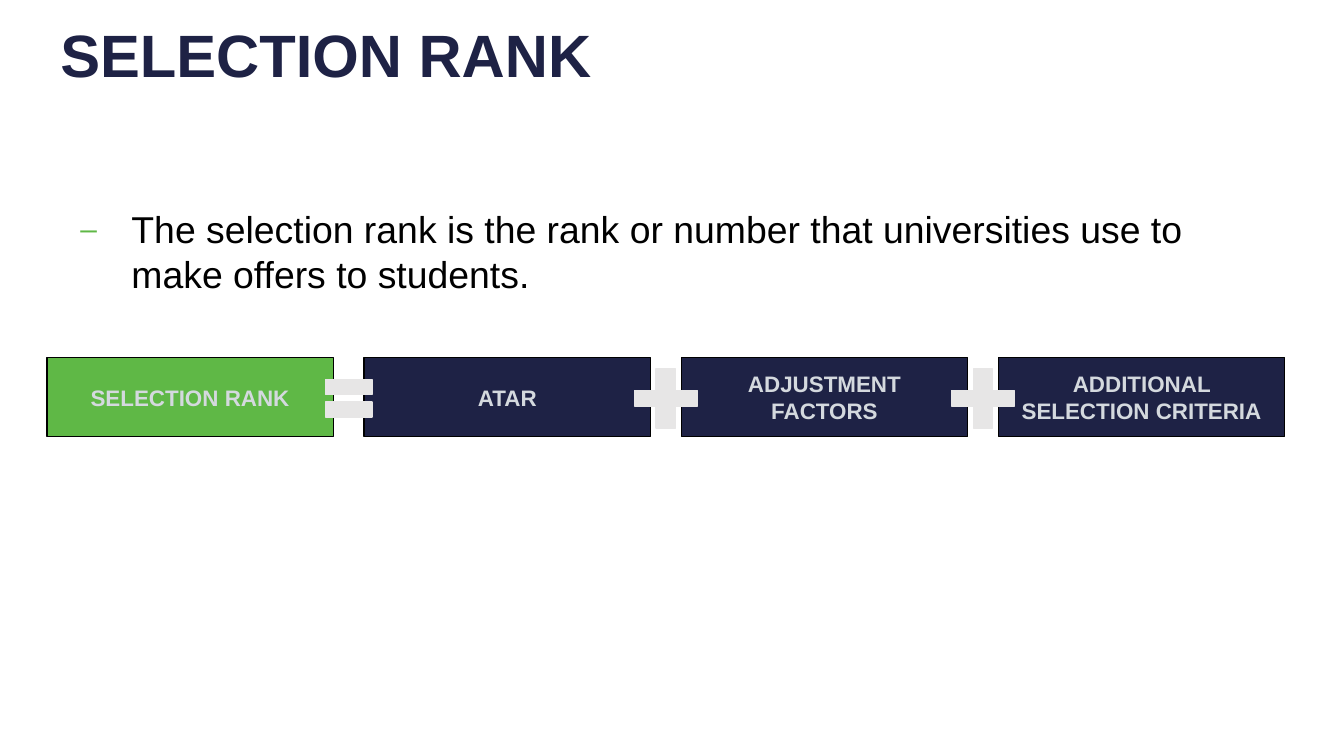
from lxml import etree
from pptx import Presentation
from pptx.dml.color import RGBColor
from pptx.enum.shapes import MSO_SHAPE
from pptx.enum.text import MSO_ANCHOR, PP_ALIGN
from pptx.oxml.ns import qn
from pptx.util import Inches, Pt

RECTANGLE, PLUS, EQUAL = MSO_SHAPE.RECTANGLE, MSO_SHAPE.CROSS, MSO_SHAPE.MATH_EQUAL
TOP, MIDDLE = MSO_ANCHOR.TOP, MSO_ANCHOR.MIDDLE
LEFT, CENTER = PP_ALIGN.LEFT, PP_ALIGN.CENTER

SLIDE_WIDTH = 10
SLIDE_HEIGHT = SLIDE_WIDTH * 9 / 16

COLORS = {
    "navy": "1E2245",
    "green": "5FB846",
    "label": "D4D9DE",
    "operator": "E7E6E6",
    "black": "000000",
}
TITLE_FONT = {"name": "Arial", "size": Pt(32), "bold": True}
BODY_FONT = {"name": "Arial", "size": Pt(20), "bold": False}
LABEL_FONT = {"name": "Arial", "size": Pt(12), "bold": True}

TERMS = [
    ("SELECTION RANK", "green"),
    ("ATAR", "navy"),
    ("ADJUSTMENT FACTORS", "navy"),
    ("ADDITIONAL SELECTION CRITERIA", "navy"),
]
OPERATORS = [(EQUAL, 0.47), (PLUS, 0.44), (PLUS, 0.44)]
TERM_GAP = 0.23
OPERATOR_WIDTH = 0.47
OPERATOR_DROP = 0.01
PLUS_ADJUSTMENT = 0.37


def color(name):
    """Return the named colour of the palette."""
    return RGBColor.from_string(COLORS[name])


def write_text(shape, text, font, color_name, anchor, alignment):
    """Write one formatted paragraph into a shape and return it."""
    frame = shape.text_frame
    frame.word_wrap = True
    frame.vertical_anchor = anchor
    paragraph = frame.paragraphs[0]
    paragraph.alignment = alignment
    run = paragraph.add_run()
    run.text = text
    for attribute, value in font.items():
        setattr(run.font, attribute, value)
    run.font.color.rgb = color(color_name)
    return paragraph


def add_block(slide, kind, left, top, width, height, fill, line):
    """Add a flat filled shape with a thin outline."""
    shape = slide.shapes.add_shape(
        kind, Inches(left), Inches(top), Inches(width), Inches(height)
    )
    shape.shadow.inherit = False
    shape.fill.solid()
    shape.fill.fore_color.rgb = color(fill)
    shape.line.color.rgb = color(line)
    shape.line.width = Pt(0.75)
    return shape


def add_title(slide, left, top, width, height):
    """Place the slide title in its box."""
    box = slide.shapes.add_textbox(
        Inches(left), Inches(top), Inches(width), Inches(height)
    )
    paragraph = write_text(box, "SELECTION RANK", TITLE_FONT, "navy", TOP, LEFT)
    paragraph.line_spacing = 0.9


def add_definition(slide, left, top, width, height):
    """Place the definition with its green dash bullet."""
    box = slide.shapes.add_textbox(
        Inches(left), Inches(top), Inches(width), Inches(height)
    )
    text = (
        "The selection rank is the rank or number that universities use to "
        "make offers to students."
    )
    paragraph = write_text(box, text, BODY_FONT, "black", MIDDLE, LEFT)
    properties = paragraph._p.get_or_add_pPr()
    properties.set("marL", str(Inches(0.88)))
    properties.set("indent", str(Inches(-0.38)))
    bullet_color = etree.SubElement(properties, qn("a:buClr"))
    etree.SubElement(bullet_color, qn("a:srgbClr"), val=COLORS["green"])
    etree.SubElement(properties, qn("a:buSzPct"), val="80000")
    etree.SubElement(properties, qn("a:buFont"), typeface="Arial")
    etree.SubElement(properties, qn("a:buChar"), char="‒")


def add_equation(slide, left, top, width, height):
    """Place the terms in equal columns with an operator over each gap."""
    term_width = (width - TERM_GAP * (len(TERMS) - 1)) / len(TERMS)
    pitch = term_width + TERM_GAP
    for index, (label, fill) in enumerate(TERMS):
        term = add_block(
            slide, RECTANGLE, left + index * pitch, top, term_width, height, fill, "black"
        )
        write_text(term, label, LABEL_FONT, "label", MIDDLE, CENTER)
    for index, (kind, operator_height) in enumerate(OPERATORS, start=1):
        operator = add_block(
            slide,
            kind,
            left + index * pitch - (TERM_GAP + OPERATOR_WIDTH) / 2,
            top + (height - operator_height) / 2 + OPERATOR_DROP,
            OPERATOR_WIDTH,
            operator_height,
            "operator",
            "operator",
        )
        if kind == PLUS:
            operator.adjustments[0] = PLUS_ADJUSTMENT


def main():
    """Build and save the selection rank slide."""
    presentation = Presentation()
    presentation.slide_width = Inches(SLIDE_WIDTH)
    presentation.slide_height = Inches(SLIDE_HEIGHT)
    slide = presentation.slides.add_slide(presentation.slide_layouts[6])
    add_title(slide, 0.35, 0.14, 9.29, 0.94)
    add_equation(slide, 0.35, 2.66, 9.21, 0.59)
    add_definition(slide, 0, 1.32, 9.56, 1.1)
    presentation.save("out.pptx")


if __name__ == "__main__":
    main()
